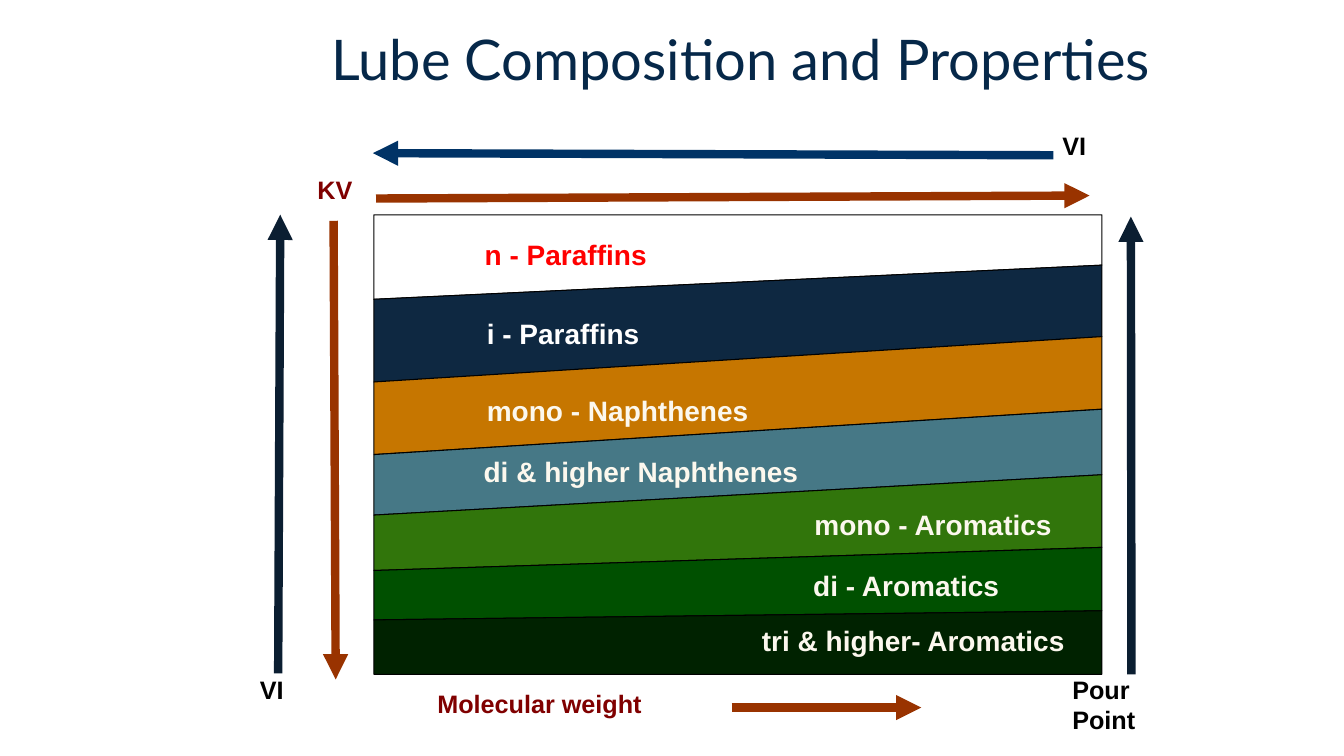
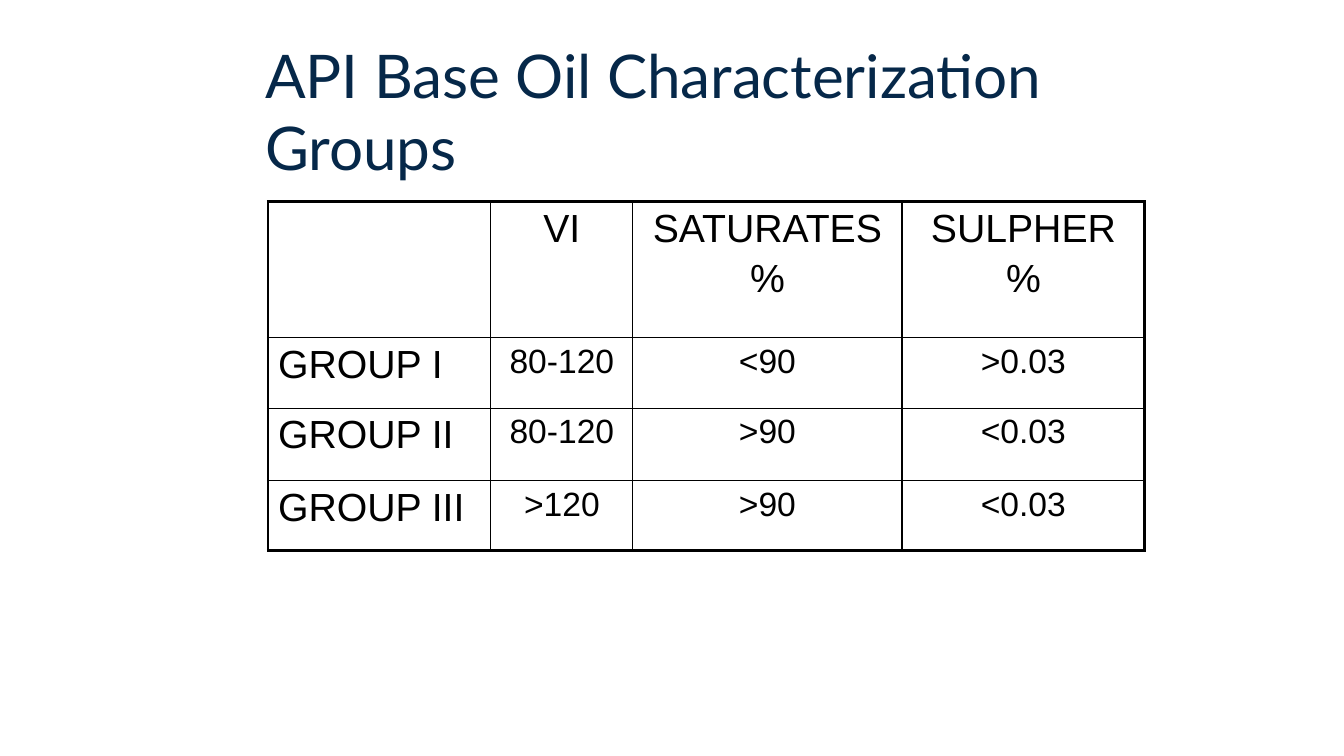
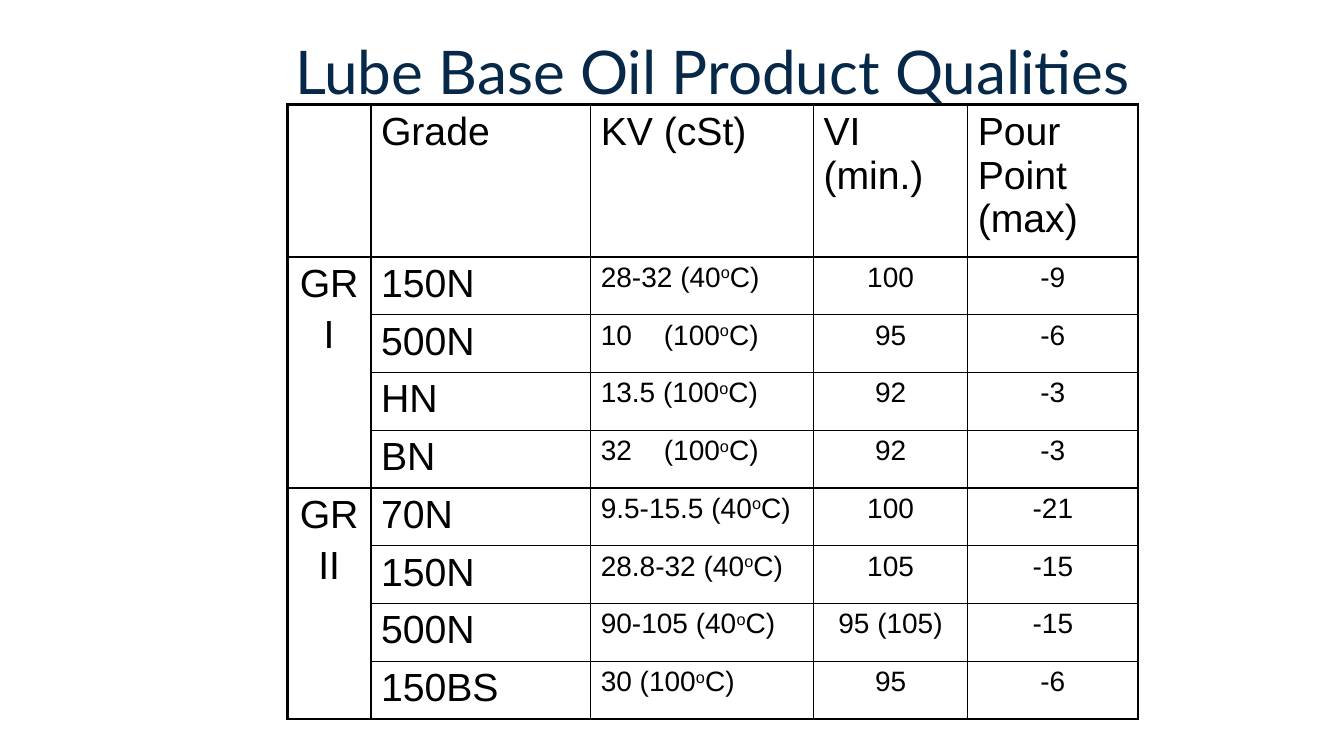
from dataclasses import dataclass
from itertools import pairwise

from lxml.etree import SubElement as Sub
from pptx import Presentation
from pptx.dml.color import RGBColor as Rgb
from pptx.enum.shapes import MSO_CONNECTOR as Conn
from pptx.enum.text import MSO_AUTO_SIZE as Auto, PP_ALIGN as Align
from pptx.oxml.ns import qn
from pptx.util import Pt

INK = "062849"
BLACK = "000000"
WHITE = "FFFFFF"
CREAM = "FCF8EE"
RUST = "993300"
WINE = "800000"
NAVY = "0B1E31"
BLUE = "003366"
LEFT, MID = Align.LEFT, Align.CENTER
THIN, THICK = 1, 2.25


@dataclass
class Label:
    text: str
    x: float
    y: float
    w: float
    color: str
    size: float = 20
    h: float = 31


@dataclass
class Arrow:
    x: float
    y: float
    to_x: float
    to_y: float
    color: str


@dataclass
class Col:
    width: float
    align: Align
    size: float


@dataclass
class Grid:
    x: float
    y: float
    cols: list[Col]
    highs: list[float]
    rows: list[list[str]]
    head: Align
    spans: tuple[tuple[int, int], ...] = ()


BANDS = [WHITE, "0E2841", "C67600", "467886", "31750B", "005000", "002200"]
EDGES = [(153.4, 153.4), (213.8, 189.4), (272.9, 240.5), (324.7, 292.3),
         (367.9, 339.1), (407.5, 391), (442.8, 436.3), (481.7, 481.7)]
BAND_L, BAND_R = 267.1, 787

LABELS = [
    Label("n - Paraffins", 339.1, 166.3, 212, "FF0000"),
    Label("i - Paraffins", 340.6, 222.5, 212, WHITE),
    Label("mono - Naphthenes", 340.6, 277.2, 212, CREAM),
    Label("di & higher Naphthenes", 338.4, 321.1, 302, CREAM),
    Label("mono - Aromatics", 574.6, 359.3, 212, CREAM),
    Label("di - Aromatics", 573.8, 402.5, 212, CREAM),
    Label("tri & higher- Aromatics", 537.1, 442.1, 248, CREAM),
    Label("Molecular weight", 305.3, 488.2, 212, WINE, 18, 29),
    Label("KV", 219.6, 121, 59, WINE, 18, 29),
    Label("VI", 751.7, 89.3, 59, BLACK, 18, 29),
    Label("Pour Point", 758.9, 478.1, 81, BLACK, 18, 51),
    Label("VI", 178.6, 478.1, 81, BLACK, 18, 29),
]

ARROWS = [
    Arrow(522.7, 505.4, 658.1, 505.4, RUST),
    Arrow(268.6, 141.8, 778.3, 139.7, RUST),
    Arrow(752.4, 110.9, 266.4, 109.4, BLUE),
    Arrow(808.2, 481.7, 807.8, 154.8, NAVY),
    Arrow(198.7, 481, 200.2, 153.4, NAVY),
    Arrow(238.3, 157.7, 239.8, 485.3, RUST),
]

GROUPS = Grid(
    191.5, 144,
    [Col(159.1, LEFT, 28), Col(101.5, MID, 24), Col(192.2, MID, 24),
     Col(173.5, MID, 24)],
    [97.2, 50.4, 51.8, 49.7],
    [["", "VI", "SATURATES\n%", "SULPHER\n%"],
     ["GROUP I", "80-120", "<90", ">0.03"],
     ["GROUP II", "80-120", ">90", "<0.03"],
     ["GROUP III", ">120", ">90", "<0.03"]],
    MID)

GRADES = Grid(
    205.2, 74.9,
    [Col(59.8, MID, 28), Col(157, LEFT, 28), Col(159.1, LEFT, 20),
     Col(110.2, MID, 20), Col(121.7, MID, 20)],
    [108.7] + [41.25] * 8,
    [["", "Grade", "KV (cSt)", "VI (min.)", "Pour Point (max)"],
     ["GR\nI", "150N", "28-32 (40^o^C)", "100", "-9"],
     ["", "500N", "10\t(100^o^C)", "95", "-6"],
     ["", "HN", "13.5 (100^o^C)", "92", "-3"],
     ["", "BN", "32\t(100^o^C)", "92", "-3"],
     ["GR\nII", "70N", "9.5-15.5 (40^o^C)", "100", "-21"],
     ["", "150N", "28.8-32 (40^o^C)", "105", "-15"],
     ["", "500N", "90-105 (40^o^C)", "95 (105)", "-15"],
     ["", "150BS", "30 (100^o^C)", "95", "-6"]],
    LEFT, ((1, 4), (5, 8)))


def paint(part, color: str) -> None:
    part.rgb = Rgb.from_string(color)


def add_run(para, text: str, size: float, color: str, face: str = "Arial",
            bold: bool = False, sup: bool = False) -> None:
    run = para.add_run()
    run.text = text
    font = run.font
    font.name, font.size, font.bold = face, Pt(size), bold
    paint(font.color, color)
    if sup:
        font._element.set("baseline", "30000")


def add_box(slide, x: float, y: float, w: float, h: float):
    frame = slide.shapes.add_textbox(Pt(x), Pt(y), Pt(w), Pt(h)).text_frame
    frame.word_wrap = True
    return frame


def add_title(slide, text: str, x: float, y: float, w: float,
              size: float = 43) -> None:
    frame = add_box(slide, x, y, w, 90)
    add_run(frame.paragraphs[0], text, size, INK, "Lato")


def add_label(slide, tag: Label) -> None:
    frame = add_box(slide, tag.x, tag.y, tag.w, tag.h)
    frame.auto_size = Auto.SHAPE_TO_FIT_TEXT
    add_run(frame.paragraphs[0], tag.text, tag.size, tag.color, bold=True)


def add_band(slide, color: str, top: tuple[float, float],
             base: tuple[float, float]) -> None:
    pen = slide.shapes.build_freeform(Pt(BAND_L), Pt(top[0]))
    pen.add_line_segments([(Pt(BAND_L), Pt(base[0])), (Pt(BAND_R), Pt(base[1])),
                           (Pt(BAND_R), Pt(top[1]))], close=True)
    band = pen.convert_to_shape()
    band.shadow.inherit = False
    band.fill.solid()
    paint(band.fill.fore_color, color)
    paint(band.line.color, BLACK)
    band.line.width = Pt(0.75)


def add_arrow(slide, arrow: Arrow) -> None:
    link = slide.shapes.add_connector(
        Conn.STRAIGHT, Pt(arrow.x), Pt(arrow.y), Pt(arrow.to_x), Pt(arrow.to_y))
    paint(link.line.color, arrow.color)
    link.line.width = Pt(6)
    Sub(link.line._get_or_add_ln(), qn("a:tailEnd"), type="triangle")
    Sub(link._element.spPr, qn("a:effectLst"))


def add_edge(cell, side: str, width: float) -> None:
    edge = Sub(cell._tc.get_or_add_tcPr(), qn("a:ln" + side), w=str(Pt(width)))
    fill = Sub(edge, qn("a:solidFill"))
    Sub(fill, qn("a:srgbClr"), val=BLACK)


def fill_cell(cell, text: str, align: Align, size: float) -> None:
    frame = cell.text_frame
    for i, line in enumerate(text.split("\n")):
        para = frame.add_paragraph() if i else frame.paragraphs[0]
        para.alignment = align
        if i:
            para.space_before = Pt(5)
        if "\t" in line:
            tabs = Sub(para._p.get_or_add_pPr(), qn("a:tabLst"))
            Sub(tabs, qn("a:tab"), pos=str(Pt(45)), algn="l")
        for j, part in enumerate(line.split("^")):
            if part:
                add_run(para, part, size, BLACK, sup=j % 2 == 1)


def add_grid(slide, grid: Grid) -> None:
    last_r, last_c = len(grid.rows) - 1, len(grid.cols) - 1
    wide = sum(col.width for col in grid.cols)
    table = slide.shapes.add_table(
        last_r + 1, last_c + 1, Pt(grid.x), Pt(grid.y),
        Pt(wide), Pt(sum(grid.highs))).table
    table.first_row = table.horz_banding = False
    for c, col in enumerate(grid.cols):
        table.columns[c].width = Pt(col.width)
    for r, row in enumerate(grid.rows):
        table.rows[r].height = Pt(grid.highs[r])
        for c, text in enumerate(row):
            cell, col = table.cell(r, c), grid.cols[c]
            rims = {"L": c == 0, "R": c == last_c, "T": r == 0, "B": r == last_r}
            for side, rim in rims.items():
                add_edge(cell, side, THICK if rim else THIN)
            cell.fill.background()
            if r:
                fill_cell(cell, text, col.align, col.size)
            else:
                fill_cell(cell, text, grid.head, 28)
    for top, base in grid.spans:
        table.cell(top, 0).merge(table.cell(base, 0))


def main() -> None:
    deck = Presentation()
    deck.slide_width, deck.slide_height = Pt(960), Pt(540)
    blank = deck.slide_layouts[6]

    slide = deck.slides.add_slide(blank)
    add_title(slide, "Lube Composition and Properties", 229.7, 13.7, 612, 40)
    for color, (top, base) in zip(BANDS, pairwise(EDGES)):
        add_band(slide, color, top, base)
    for tag in LABELS:
        add_label(slide, tag)
    for arrow in ARROWS:
        add_arrow(slide, arrow)

    slide = deck.slides.add_slide(blank)
    add_title(slide, "API Base Oil Characterization Groups", 182.2, 23.8, 634.3)
    add_grid(slide, GROUPS)

    slide = deck.slides.add_slide(blank)
    add_title(slide, "Lube Base Oil Product Qualities", 203.8, 20.9, 612)
    add_grid(slide, GRADES)

    deck.save("out.pptx")


if __name__ == "__main__":
    main()
